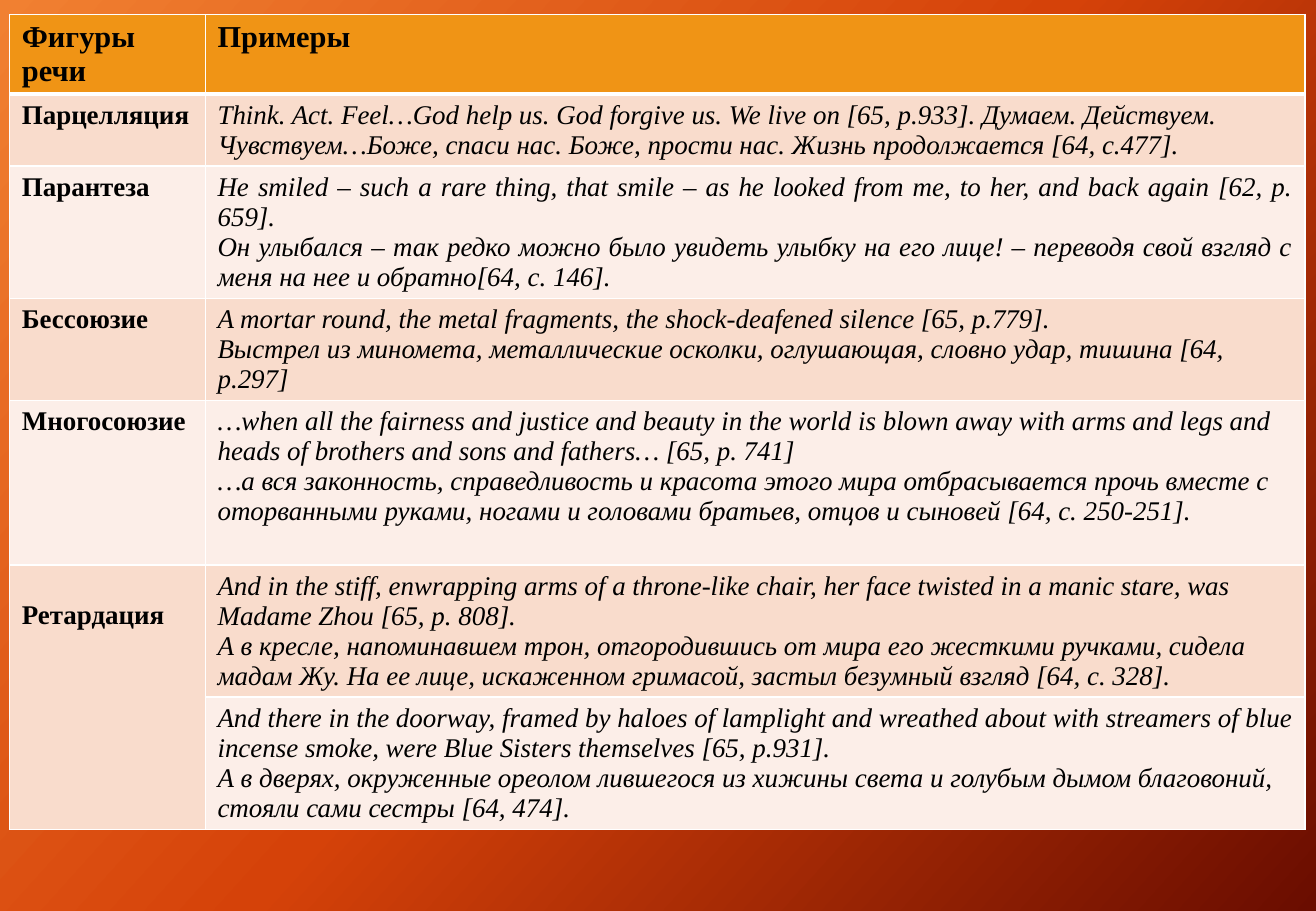
from copy import deepcopy

from lxml import etree
from pptx import Presentation
from pptx import util as u
from pptx.dml.color import RGBColor
from pptx.enum import text
from pptx.oxml.ns import qn

HEADER = ("Фигуры речи", "Примеры")

# label, example paragraphs, row height in text lines
FIGURES = [
    ("Парцелляция", ["Think. Act. Feel…God help us. God forgive us. We live on [65, p.933]. Думаем. "
                     "Действуем. Чувствуем…Боже, спаси нас. Боже, прости нас. Жизнь продолжается [64, c.477]."], 2),
    ("Парантеза", ["He smiled – such a rare thing, that smile – as he looked from me, to her, "
                   "and back again [62, p. 659].",
                   "Он улыбался – так редко можно было увидеть улыбку на его лице! – переводя "
                   "свой взгляд с меня на нее и обратно[64, c. 146]."], 4),
    ("Бессоюзие", ["A mortar round, the metal fragments, the shock-deafened silence [65, p.779].",
                   "Выстрел из миномета, металлические осколки, оглушающая, словно удар, "
                   "тишина [64, p.297]"], 3),
    ("Многосоюзие", ["…when all the fairness and justice and beauty in the world is blown away with "
                     "arms and legs and heads of brothers and sons and fathers… [65, p. 741]",
                     "…а вся законность, справедливость и красота этого мира отбрасывается прочь вместе с "
                     "оторванными руками, ногами и головами братьев, отцов и сыновей [64, c. 250-251]."], 5.1),
    ("Ретардация", ["And in the stiff, enwrapping arms of a throne-like chair, her face twisted in a "
                    "manic stare, was Madame Zhou [65, p. 808].",
                    "А в кресле, напоминавшем трон, отгородившись от мира его жесткими ручками, сидела "
                    "мадам Жу. На ее лице, искаженном гримасой, застыл безумный взгляд [64, c. 328]."], 4),
    (None, ["And there in the doorway, framed by haloes of lamplight and wreathed about with streamers "
            "of blue incense smoke, were Blue Sisters themselves [65, p.931].",
            "А в дверях, окруженные ореолом лившегося из хижины света и голубым дымом благовоний, "
            "стояли сами сестры [64, 474]."], 4),
]


def rgb(value):
    return RGBColor.from_string(value)


class Deck:
    font = "Times New Roman"
    ink, line = "000000", "FFFFFF"
    head_fill, bands = "F09415", ("F9DCCC", "FCEEE8")
    line_share, pad_share = 3.28, 1.33  # percent of slide height

    def __init__(self, width, height):
        self.prs = Presentation()
        self.prs.slide_width, self.prs.slide_height = u.Inches(width), u.Inches(height)
        self.s = self.prs.slides.add_slide(self.prs.slide_layouts[6])

    def x(self, percent):
        return round(self.prs.slide_width * percent / 100)

    def y(self, percent):
        return round(self.prs.slide_height * percent / 100)

    def background(self, stops, angle):
        fill = self.s.background.fill
        fill.gradient()
        fill.gradient_angle = 360 - angle
        last = list(self.s.element.iter(qn("a:gs")))[-1]
        last.addnext(deepcopy(last))
        for stop, (position, colour) in zip(fill.gradient_stops, stops):
            stop.position = position
            stop.color.rgb = rgb(colour)

    def table(self, left, top, columns, lines):
        heights = [self.y(n * self.line_share + self.pad_share) for n in lines]
        tbl = self.s.shapes.add_table(len(lines), len(columns), self.x(left), self.y(top),
                                      self.x(sum(columns)), sum(heights)).table
        tbl.horz_banding = False
        for column, share in zip(tbl.columns, columns):
            column.width = self.x(share)
        for row, height in zip(tbl.rows, heights):
            row.height = height
        return tbl

    def borders(self, cell, **widths):
        tc_pr = cell._tc.get_or_add_tcPr()
        for side in "LRTB":
            ln = etree.SubElement(tc_pr, qn("a:ln" + side), w=str(u.Pt(widths.get(side, 1))))
            solid = etree.SubElement(ln, qn("a:solidFill"))
            etree.SubElement(solid, qn("a:srgbClr"), val=self.line)

    def cell(self, cell, paragraphs, fill, align=text.PP_ALIGN.LEFT, edges=None, **style):
        self.borders(cell, **(edges or {}))
        cell.fill.solid()
        cell.fill.fore_color.rgb = rgb(fill)
        tf = cell.text_frame
        for i, words in enumerate(paragraphs):
            p = tf.add_paragraph() if i else tf.paragraphs[0]
            p.alignment = align
            r = p.add_run()
            r.text = words
            for name, value in {"name": self.font, "size": u.Pt(16), **style}.items():
                setattr(r.font, name, value)
            r.font.color.rgb = rgb(self.ink)


def main():
    deck = Deck(10.83, 7.5)
    deck.background([(0, "F18031"), (0.5, "D54209"), (1, "6A0D00")], 42)

    # Table frame: the header takes two larger lines
    tbl = deck.table(0.74, 1.6, (14.87, 83.56), [2.25] + [n for *_, n in FIGURES])

    # Header row
    for col, title in enumerate(HEADER):
        deck.cell(tbl.cell(0, col), [title], deck.head_fill, edges={"B": 3}, size=u.Pt(18), bold=True)

    # Figures of speech with their examples
    for row, (label, examples, _) in enumerate(FIGURES, 1):
        fill = deck.bands[(row - 1) % 2]
        edges = {"T": 3} if row == 1 else {}
        align = text.PP_ALIGN.JUSTIFY if label == "Парантеза" else text.PP_ALIGN.LEFT
        deck.cell(tbl.cell(row, 0), [label] if label else [], fill, edges=edges, bold=True)
        deck.cell(tbl.cell(row, 1), examples, fill, align, edges, italic=True)

    # The last label covers two rows and sits one line lower
    last = len(FIGURES)
    label_cell = tbl.cell(last - 1, 0)
    label_cell.merge(tbl.cell(last, 0))
    label_cell.margin_top = deck.y(deck.line_share + deck.pad_share / 2)

    deck.prs.save("out.pptx")


if __name__ == "__main__":
    main()
